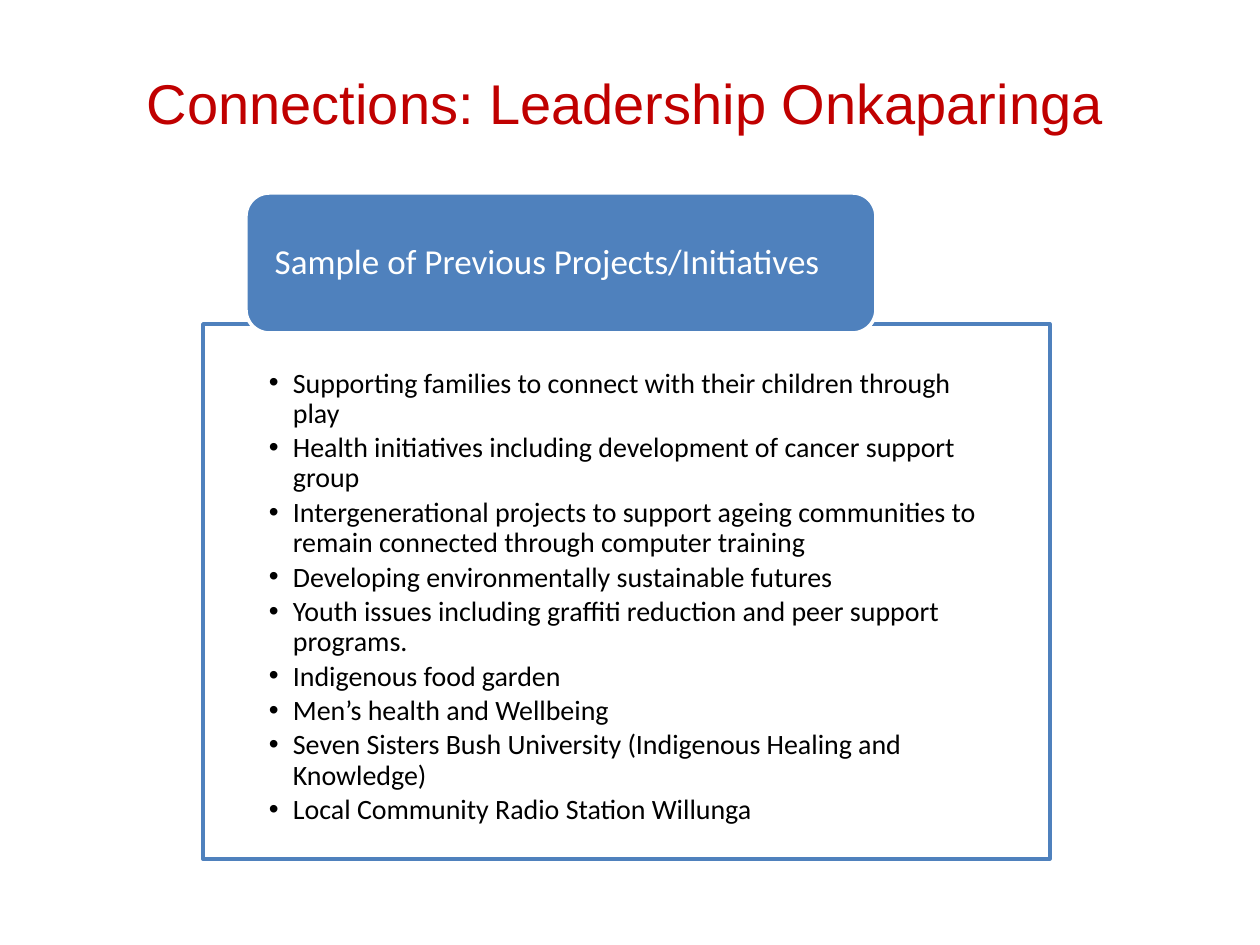
from lxml.etree import SubElement
from pptx import Presentation
from pptx.dml.color import RGBColor
from pptx.enum.shapes import MSO_SHAPE
from pptx.enum.text import MSO_ANCHOR, PP_ALIGN
from pptx.oxml.ns import qn
from pptx.util import Emu, Pt

TITLE = "Connections: Leadership Onkaparinga"
HEADING = "Sample of Previous Projects/Initiatives"
PROJECTS = [
    "Supporting families to connect with their children through play",
    "Health initiatives including development of cancer support group",
    "Intergenerational projects to support ageing communities to remain connected through computer training",
    "Developing environmentally sustainable futures",
    "Youth issues including graffiti reduction and peer support programs.",
    "Indigenous food garden",
    "Men’s health and Wellbeing",
    "Seven Sisters Bush University (Indigenous Healing and Knowledge)",
    "Local Community Radio Station Willunga",
]
BLUE, WHITE, BLACK, RED = "4F81BD", "FFFFFF", "000000", "C00000"
TITLE_BOX = (134, 62, 992, 81)
HEADING_BOX = (246, 193, 630, 140)
LIST_BOX = (203, 324, 847, 535)
INDENT = 24


def px(value):
    return Emu(round(value * 914400 / 126))


def color(value):
    return RGBColor.from_string(value)


def set_frame(shape, margins, anchor):
    frame = shape.text_frame
    frame.word_wrap = True
    frame.vertical_anchor = anchor
    frame.margin_left, frame.margin_top, frame.margin_right, frame.margin_bottom = map(px, margins)
    return frame


def add_panel(slide, kind, box, fill, line):
    shape = slide.shapes.add_shape(kind, *map(px, box))
    shape.shadow.inherit = False
    shape.fill.solid()
    shape.fill.fore_color.rgb = color(fill)
    shape.line.color.rgb = color(line)
    shape.line.width = Pt(2)
    return shape


def write(paragraph, text, size, font, text_color):
    paragraph.alignment = PP_ALIGN.LEFT
    run = paragraph.add_run()
    run.text = text
    run.font.size = Pt(size)
    run.font.name = font
    run.font.color.rgb = color(text_color)


def add_bullet(paragraph):
    properties = paragraph._p.get_or_add_pPr()
    properties.set("marL", str(px(INDENT)))
    properties.set("indent", str(-px(INDENT)))
    SubElement(properties, qn("a:buFont")).set("typeface", "Arial")
    SubElement(properties, qn("a:buChar")).set("char", "•")


def main():
    presentation = Presentation()
    presentation.slide_width, presentation.slide_height = px(1260), px(945)
    slide = presentation.slides.add_slide(presentation.slide_layouts[6])

    panel = add_panel(slide, MSO_SHAPE.RECTANGLE, LIST_BOX, WHITE, BLUE)
    fill_color = panel._element.spPr.find(qn("a:solidFill"))[0]
    SubElement(fill_color, qn("a:alpha")).set("val", "90000")
    frame = set_frame(panel, (66, 45, 66, 15), MSO_ANCHOR.TOP)
    for index, project in enumerate(PROJECTS):
        paragraph = frame.add_paragraph() if index else frame.paragraphs[0]
        add_bullet(paragraph)
        paragraph.line_spacing = 0.9
        paragraph.space_after = Pt(2.4)
        write(paragraph, project, 16, "Calibri", BLACK)

    heading = add_panel(slide, MSO_SHAPE.ROUNDED_RECTANGLE, HEADING_BOX, BLUE, WHITE)
    frame = set_frame(heading, (22, 0, 22, 0), MSO_ANCHOR.MIDDLE)
    frame.paragraphs[0].line_spacing = 0.9
    write(frame.paragraphs[0], HEADING, 20, "Calibri", WHITE)

    title = slide.shapes.add_textbox(*map(px, TITLE_BOX))
    frame = set_frame(title, (13, 6, 13, 6), MSO_ANCHOR.TOP)
    write(frame.paragraphs[0], TITLE, 32, "Arial", RED)

    presentation.save("out.pptx")


if __name__ == "__main__":
    main()
